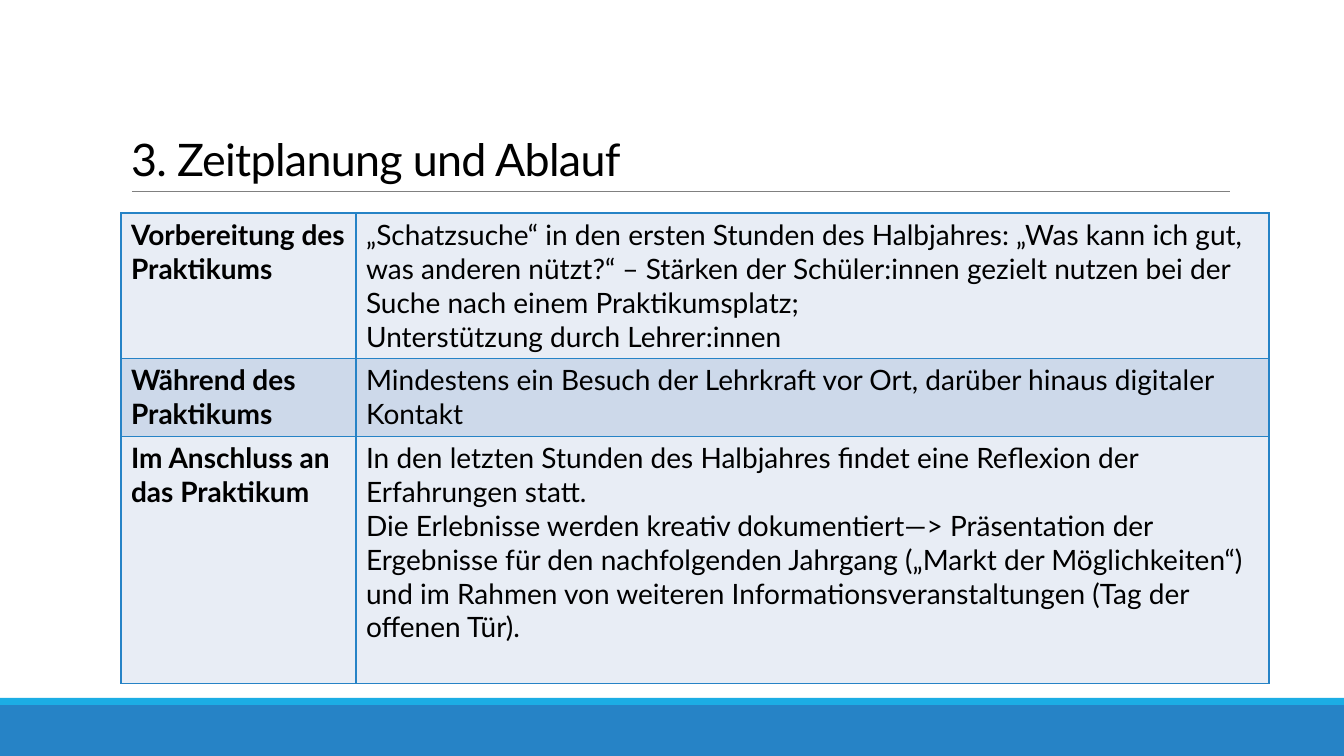
from lxml import etree
from pptx import Presentation
from pptx import util as u
from pptx.dml.color import RGBColor
from pptx.enum import shapes, text
from pptx.oxml.ns import qn

PX = 914400 / 100.8
BLUE, CYAN, GREY, BLACK = "2683C6", "1CADE4", "808080", "000000"
BANDS = ["E8EDF5", "CDD9EA"]
COLUMN_WIDTHS = [235, 913]
ROW_HEIGHTS = [145, 78, 247]
SCHEDULE = [
    ("Vorbereitung des Praktikums", [
        "„Schatzsuche“ in den ersten Stunden des Halbjahres: „Was kann ich gut, "
        "was anderen nützt?“ – Stärken der Schüler:innen gezielt nutzen bei der "
        "Suche nach einem Praktikumsplatz;",
        "Unterstützung durch Lehrer:innen"]),
    ("Während des Praktikums", [
        "Mindestens ein Besuch der Lehrkraft vor Ort, darüber hinaus digitaler Kontakt"]),
    ("Im Anschluss an das Praktikum", [
        "In den letzten Stunden des Halbjahres findet eine Reflexion der Erfahrungen statt.",
        "Die Erlebnisse werden kreativ dokumentiert—> Präsentation der Ergebnisse für den "
        "nachfolgenden Jahrgang („Markt der Möglichkeiten“) und im Rahmen von weiteren "
        "Informationsveranstaltungen (Tag der offenen Tür)."]),
]


def px(*lengths):
    return [u.Emu(round(length * PX)) for length in lengths]


def color(value):
    return RGBColor.from_string(value)


class SlideBuilder:
    font_name = "Lato"

    def __init__(self, presentation):
        self.slide = presentation.slides.add_slide(presentation.slide_layouts[5])

    def format_font(self, font, **values):
        for name, value in {"name": self.font_name, **values}.items():
            setattr(font, name, value)
        font.color.rgb = color(BLACK)

    def bar(self, fill, *box):
        shape = self.slide.shapes.add_shape(shapes.MSO_SHAPE.RECTANGLE, *px(*box))
        shape.shadow.inherit = False
        shape.fill.solid()
        shape.fill.fore_color.rgb = color(fill)
        shape.line.fill.background()

    def rule(self, *ends):
        line = self.slide.shapes.add_connector(shapes.MSO_CONNECTOR.STRAIGHT, *px(*ends))
        line.line.color.rgb = color(GREY)
        line.line.width = u.Pt(0.5)
        etree.SubElement(line._element.spPr, qn("a:effectLst"))

    def title(self, words, *box):
        title = self.slide.shapes.title
        title.left, title.top, title.width, title.height = px(*box)
        frame = title.text_frame
        frame.text = words
        settings = {"auto_size": text.MSO_AUTO_SIZE.NONE, "word_wrap": True,
                    "vertical_anchor": text.MSO_ANCHOR.BOTTOM}
        for name, value in settings.items():
            setattr(frame, name, value)
        paragraph = frame.paragraphs[0]
        paragraph.alignment = text.PP_ALIGN.LEFT
        paragraph.line_spacing = 0.85
        run = paragraph.runs[0]
        self.format_font(run.font, size=u.Pt(32))
        run.font._element.set("spc", "-50")

    def border(self, cell):
        properties = cell._tc.get_or_add_tcPr()
        for index, side in enumerate(("lnL", "lnR", "lnT", "lnB")):
            line = etree.Element(qn(f"a:{side}"), w=str(u.Pt(1)))
            fill = etree.SubElement(line, qn("a:solidFill"))
            etree.SubElement(fill, qn("a:srgbClr"), val=BLUE)
            properties.insert(index, line)

    def cell(self, cell, paragraphs, fill, bold):
        cell.fill.solid()
        cell.fill.fore_color.rgb = color(fill)
        self.border(cell)
        cell.text_frame.text = "\n".join(paragraphs)
        for paragraph in cell.text_frame.paragraphs:
            self.format_font(paragraph.runs[0].font, size=u.Pt(20), bold=bold)

    def table(self, rows, left, top):
        box = px(left, top, sum(COLUMN_WIDTHS), sum(ROW_HEIGHTS))
        table = self.slide.shapes.add_table(len(rows), len(COLUMN_WIDTHS), *box).table
        table.first_row = table.horz_banding = False
        for column, width in zip(table.columns, px(*COLUMN_WIDTHS)):
            column.width = width
        for row, height in zip(table.rows, px(*ROW_HEIGHTS)):
            row.height = height
        for index, (phase, steps) in enumerate(rows):
            fill = BANDS[index % 2]
            self.cell(table.cell(index, 0), [phase], fill, True)
            self.cell(table.cell(index, 1), steps, fill, False)


def main():
    presentation = Presentation()
    presentation.slide_width, presentation.slide_height = px(1344, 756)
    builder = SlideBuilder(presentation)
    builder.bar(BLUE, 0, 705, 1344, 51)
    builder.bar(CYAN, 0, 698, 1344, 7)
    builder.rule(132, 191, 1230, 191)
    builder.title("3. Zeitplanung und Ablauf", 121, 31, 1109, 160)
    builder.table(SCHEDULE, 121, 213)
    presentation.save("out.pptx")


if __name__ == "__main__":
    main()
